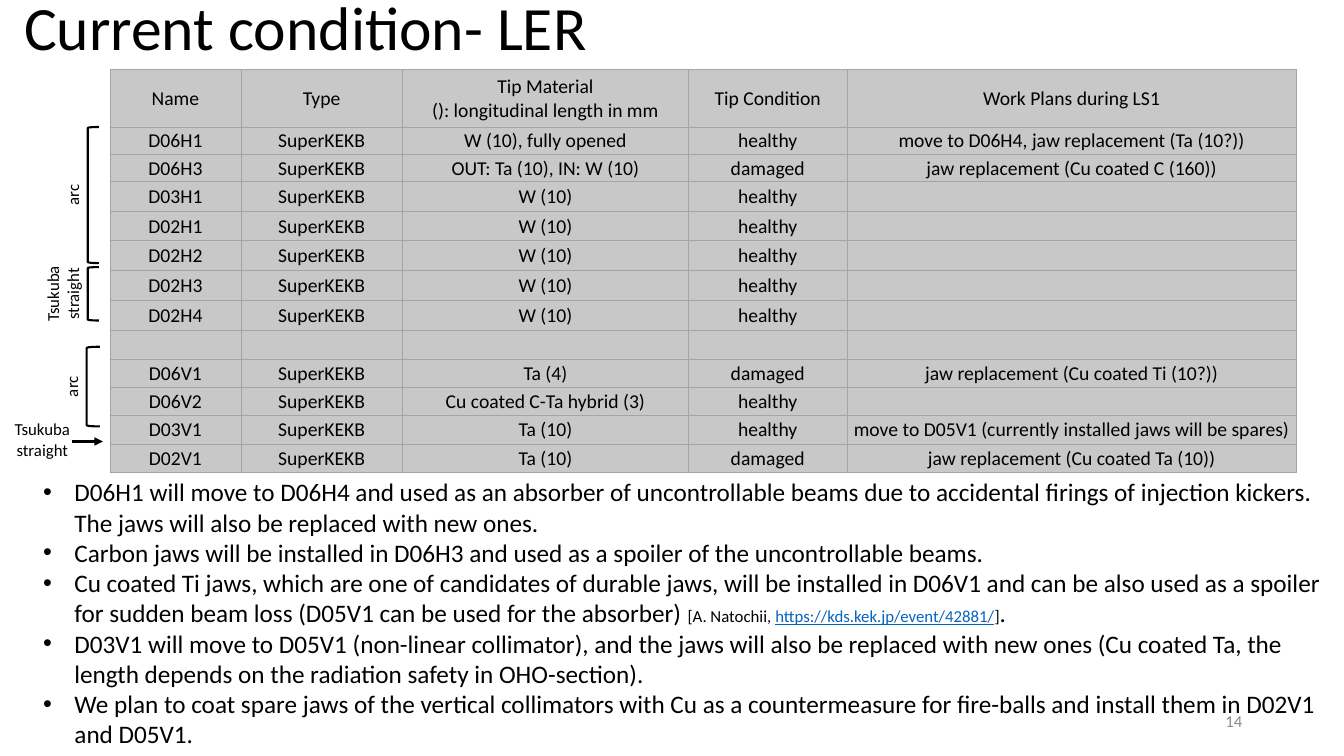
from lxml.etree import SubElement
from pptx import Presentation
from pptx.dml.color import RGBColor
from pptx.enum.shapes import MSO_CONNECTOR as Link, MSO_SHAPE as Shape
from pptx.enum.text import MSO_ANCHOR as Anchor, MSO_AUTO_SIZE as Fit, PP_ALIGN as Align
from pptx.oxml.ns import qn
from pptx.util import Inches, Pt

FONT = "Calibri"
BLACK, GREY, LINK_BLUE = "000000", "8C8C8C", "0563C1"
CELL_FILL, CELL_BORDER = "C8C8C8", "A5A5A5"

COLUMN_WIDTHS = [1.3, 1.6, 2.84, 1.57, 4.46]
ROW_HEIGHTS = [0.57] + [0.27] * 2 + [0.295] * 5 + [0.29] + [0.28] * 4
HEADER = ["Name", "Type", "Tip Material\n(): longitudinal length in mm",
          "Tip Condition", "Work Plans during LS1"]
COLLIMATORS = [
    ("D06H1", "W (10), fully opened", "healthy", "move to D06H4, jaw replacement (Ta (10?))"),
    ("D06H3", "OUT: Ta (10), IN: W (10)", "damaged", "jaw replacement (Cu coated C (160))"),
    ("D03H1", "W (10)", "healthy", ""),
    ("D02H1", "W (10)", "healthy", ""),
    ("D02H2", "W (10)", "healthy", ""),
    ("D02H3", "W (10)", "healthy", ""),
    ("D02H4", "W (10)", "healthy", ""),
    None,
    ("D06V1", "Ta (4)", "damaged", "jaw replacement (Cu coated Ti (10?))"),
    ("D06V2", "Cu coated C-Ta hybrid (3)", "healthy", ""),
    ("D03V1", "Ta (10)", "healthy", "move to D05V1 (currently installed jaws will be spares)"),
    ("D02V1", "Ta (10)", "damaged", "jaw replacement (Cu coated Ta (10))"),
]
PLANS = [
    [("D06H1 will move to D06H4 and used as an absorber of uncontrollable beams due to "
      "accidental firings of injection kickers. The jaws will also be replaced with new ones.", 18, BLACK)],
    [("Carbon jaws will be installed in D06H3 and used as a spoiler of the uncontrollable beams.", 18, BLACK)],
    [("Cu coated Ti jaws, which are one of candidates of durable jaws, will be installed in D06V1 "
      "and can be also used as a spoiler for sudden beam loss (D05V1 can be used for the absorber) ", 18, BLACK),
     ("[A. Natochii, ", 12, BLACK),
     ("https://kds.kek.jp/event/42881/", 12, LINK_BLUE),
     ("]", 12, BLACK),
     (".", 18, BLACK)],
    [("D03V1 will move to D05V1 (non-linear collimator), and the jaws will also be replaced with "
      "new ones (Cu coated Ta, the length depends on the radiation safety in OHO-section).", 18, BLACK)],
    [("We plan to coat spare jaws of the vertical collimators with Cu as a countermeasure for "
      "fire-balls and install them in D02V1 and D05V1.", 18, BLACK)],
]
BRACKETS = [
    (["arc"], 0.41, (0.87, 1.26, 0.11, 1.35)),
    (["Tsukuba", "straight"], 0.76, (0.87, 2.65, 0.11, 0.53)),
    (["arc"], 0.41, (0.86, 3.44, 0.13, 0.79)),
]


def color(code):
    return RGBColor.from_string(code)


def add_run(paragraph, text, size, code=BLACK):
    run = paragraph.add_run()
    run.text = text
    run.font.name = FONT
    run.font.size = Pt(size)
    run.font.color.rgb = color(code)
    return run


def add_text(slide, box, lines, align=Align.LEFT, anchor=Anchor.TOP, wrap=True):
    textbox = slide.shapes.add_textbox(*map(Inches, box))
    frame = textbox.text_frame
    frame.word_wrap = wrap
    frame.auto_size = Fit.NONE if wrap else Fit.SHAPE_TO_FIT_TEXT
    frame.vertical_anchor = anchor
    for index, line in enumerate(lines):
        paragraph = frame.add_paragraph() if index else frame.paragraphs[0]
        paragraph.alignment = align
        for text, size, code in line:
            run = add_run(paragraph, text, size, code)
            if code == LINK_BLUE:
                run.font.underline = True
    return textbox


def add_title(slide, box):
    title = add_text(slide, box, [[("Current condition- LER", 44, BLACK)]], anchor=Anchor.MIDDLE)
    title.text_frame.paragraphs[0].line_spacing = 0.9


def fill_cell(cell, text):
    cell.margin_left = cell.margin_right = cell.margin_top = Inches(0.01)
    cell.margin_bottom = 0
    cell.vertical_anchor = Anchor.MIDDLE
    paragraph = cell.text_frame.paragraphs[0]
    paragraph.alignment = Align.CENTER
    if not text:
        SubElement(paragraph._p, qn("a:endParaRPr"), sz="1400")
    for index, line in enumerate(text.split("\n") if text else []):
        if index:
            paragraph.add_line_break()
        add_run(paragraph, line, 14)
    properties = cell._tc.get_or_add_tcPr()
    for side in ("lnL", "lnR", "lnT", "lnB"):
        border = SubElement(properties, qn(f"a:{side}"), w=str(Pt(0.5)))
        SubElement(SubElement(border, qn("a:solidFill")), qn("a:srgbClr"), val=CELL_BORDER)
    cell.fill.solid()
    cell.fill.fore_color.rgb = color(CELL_FILL)


def add_collimator_table(slide, box):
    records = [HEADER]
    for collimator in COLLIMATORS:
        if collimator:
            name, *details = collimator
            records.append([name, "SuperKEKB", *details])
        else:
            records.append([""] * len(HEADER))
    table = slide.shapes.add_table(len(records), len(HEADER), *map(Inches, box)).table
    for column, width in zip(table.columns, COLUMN_WIDTHS):
        column.width = Inches(width)
    for row, height, record in zip(table.rows, ROW_HEIGHTS, records):
        row.height = Inches(height)
        for cell, text in zip(row.cells, record):
            fill_cell(cell, text)


def add_plans(slide, box):
    plans = add_text(slide, box, PLANS)
    for paragraph in plans.text_frame.paragraphs:
        properties = paragraph._p.get_or_add_pPr()
        properties.set("marL", str(Inches(0.31)))
        properties.set("indent", str(-Inches(0.31)))
        SubElement(properties, qn("a:buFont"), typeface="Arial")
        SubElement(properties, qn("a:buChar"), char="•")


def add_label(slide, box, words):
    return add_text(slide, box, [[(word, 12, BLACK)] for word in words], Align.CENTER, wrap=False)


def add_section_bracket(slide, box, words, label_width):
    left, top, _, height = box
    bracket = slide.shapes.add_shape(Shape.LEFT_BRACKET, *map(Inches, box))
    bracket.shadow.inherit = False
    bracket.fill.background()
    bracket.line.color.rgb = color(BLACK)
    bracket.line.width = Pt(1.5)
    label_height = 0.1 + 0.2 * len(words)
    label_box = (left - (label_height + label_width) / 2, top + (height - label_height) / 2,
                 label_width, label_height)
    add_label(slide, label_box, words).rotation = 270


def add_straight_pointer(slide, box):
    left, top, _, _ = box
    add_label(slide, box, ["Tsukuba", "straight"])
    start, end, level = Inches(left + 0.67), Inches(left + 0.98), Inches(top + 0.27)
    arrow = slide.shapes.add_connector(Link.STRAIGHT, start, level, end, level)
    arrow.line.color.rgb = color(BLACK)
    arrow.line.width = Pt(1.5)
    SubElement(arrow.line._get_or_add_ln(), qn("a:tailEnd"), type="triangle")
    SubElement(arrow._element.spPr, qn("a:effectLst"))


def add_slide_number(slide, box):
    add_text(slide, box, [[("14", 12, GREY)]], Align.RIGHT, Anchor.MIDDLE)


def main():
    deck = Presentation()
    deck.slide_width, deck.slide_height = Inches(13.33), Inches(7.5)
    slide = deck.slides.add_slide(deck.slide_layouts[6])
    add_title(slide, (0.14, -0.13, 11.5, 0.86))
    add_collimator_table(slide, (1.09, 0.69, sum(COLUMN_WIDTHS), sum(ROW_HEIGHTS)))
    add_plans(slide, (0.33, 4.68, 12.98, 2.83))
    for words, label_width, box in BRACKETS:
        add_section_bracket(slide, box, words, label_width)
    add_straight_pointer(slide, (0.04, 4.11, 0.76, 0.5))
    add_slide_number(slide, (9.42, 6.95, 3, 0.4))
    deck.save("out.pptx")


if __name__ == "__main__":
    main()
